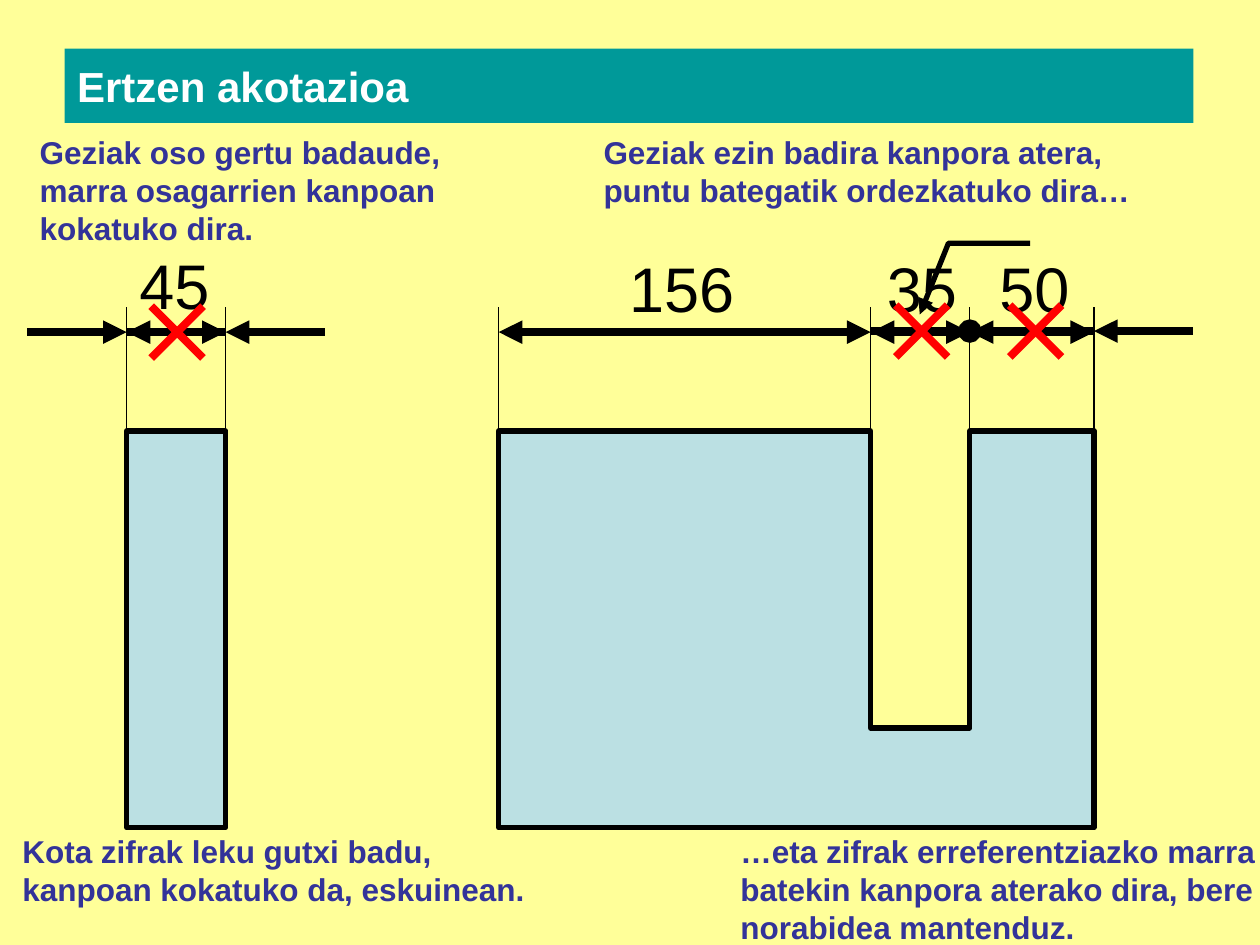
from lxml.etree import SubElement
from pptx import Presentation
from pptx.dml.color import RGBColor
from pptx.enum.shapes import MSO_CONNECTOR, MSO_SHAPE
from pptx.enum.text import MSO_ANCHOR, PP_ALIGN
from pptx.oxml.ns import qn
from pptx.util import Pt

CREAM = RGBColor(0xFF, 0xFF, 0x99)
TEAL = RGBColor(0x00, 0x99, 0x99)
PALE_BLUE = RGBColor(0xBB, 0xE0, 0xE3)
INDIGO = RGBColor(0x33, 0x33, 0x99)
BLACK = RGBColor(0, 0, 0)
WHITE = RGBColor(0xFF, 0xFF, 0xFF)
RED = RGBColor(0xFF, 0, 0)

# Edges of the two parts, in points
BAR_LEFT, BAR_RIGHT = 72.4, 129
PART_LEFT, SLOT_LEFT, SLOT_RIGHT, PART_RIGHT = 285, 497.5, 554.2, 625.2
PART_TOP, SLOT_BOTTOM, PART_BOTTOM = 246.4, 416, 473
EXTENSION_TOP = 175.6
BAR_Y, PART_Y = 189.8, 189.2
ARROW_LENGTH = 56.7
CROSS_SIZE = 29.6


def add_ends(shape, head, tail):
    line = shape.line._get_or_add_ln()
    for tag, kind in (("a:headEnd", head), ("a:tailEnd", tail)):
        if kind:
            SubElement(line, qn(tag), type=kind)


def add_line(page, start, end, width=4.5, color=BLACK, head=None, tail=None):
    points = [Pt(value) for value in (*start, *end)]
    line = page.shapes.add_connector(MSO_CONNECTOR.STRAIGHT, *points)
    line.line.color.rgb = color
    line.line.width = Pt(width)
    add_ends(line, head, tail)
    SubElement(line._element.spPr, qn("a:effectLst"))


def add_dimension(page, left, right, y, head=None, tail=None):
    add_line(page, (left, y), (right, y), head=head, tail=tail)


def add_cross(page, center_x, center_y):
    half = CROSS_SIZE / 2
    for side in (-half, half):
        add_line(page, (center_x + side, center_y - half),
                 (center_x - side, center_y + half), color=RED)


def style_outline(shape, fill=None):
    shape.shadow.inherit = False
    if fill is None:
        shape.fill.background()
    else:
        shape.fill.solid()
        shape.fill.fore_color.rgb = fill
    shape.line.color.rgb = BLACK
    shape.line.width = Pt(3)


def add_outline(page, points, close=True):
    corners = [(Pt(x), Pt(y)) for x, y in points]
    builder = page.shapes.build_freeform(*corners[0], scale=1.0)
    builder.add_line_segments(corners[1:], close=close)
    return builder.convert_to_shape()


def write(box, text, size, color, bold=False):
    box.text_frame.text = text
    para = box.text_frame.paragraphs[0]
    para.alignment = PP_ALIGN.LEFT
    span = para.runs[0]
    span.font.name = "Arial"
    span.font.size = Pt(size)
    span.font.bold = bold
    span.font.color.rgb = color


def add_text(page, text, left, top, width, height, size, color, bold=False):
    box = page.shapes.add_textbox(Pt(left), Pt(top), Pt(width), Pt(height))
    box.text_frame.word_wrap = True
    write(box, text, size, color, bold)


def add_title(page, text):
    box = page.shapes.add_shape(MSO_SHAPE.RECTANGLE, Pt(37), Pt(27.8), Pt(645), Pt(42.5))
    box.shadow.inherit = False
    box.fill.solid()
    box.fill.fore_color.rgb = TEAL
    box.line.fill.background()
    box.text_frame.vertical_anchor = MSO_ANCHOR.MIDDLE
    write(box, text, 24, WHITE, bold=True)


def main():
    deck = Presentation()
    deck.slide_width, deck.slide_height = Pt(720), Pt(540)
    page = deck.slides.add_slide(deck.slide_layouts[6])
    page.background.fill.solid()
    page.background.fill.fore_color.rgb = CREAM

    # Slotted part and narrow bar
    part = add_outline(page, [
        (PART_LEFT, PART_BOTTOM), (PART_LEFT, PART_TOP), (SLOT_LEFT, PART_TOP),
        (SLOT_LEFT, SLOT_BOTTOM), (SLOT_RIGHT, SLOT_BOTTOM),
        (SLOT_RIGHT, PART_TOP), (PART_RIGHT, PART_TOP), (PART_RIGHT, PART_BOTTOM)])
    style_outline(part, PALE_BLUE)
    bar = page.shapes.add_shape(
        MSO_SHAPE.RECTANGLE, Pt(BAR_LEFT), Pt(PART_TOP),
        Pt(BAR_RIGHT - BAR_LEFT), Pt(PART_BOTTOM - PART_TOP))
    style_outline(bar, PALE_BLUE)

    # Extension lines
    for x in (BAR_LEFT, BAR_RIGHT, PART_LEFT, SLOT_LEFT, SLOT_RIGHT, PART_RIGHT):
        add_line(page, (x, PART_TOP), (x, EXTENSION_TOP), width=0.75)

    # Dimension lines with arrows inside
    for left, right in ((BAR_LEFT, BAR_RIGHT), (PART_LEFT, SLOT_LEFT),
                        (SLOT_LEFT, SLOT_RIGHT), (SLOT_RIGHT, PART_RIGHT)):
        add_dimension(page, left, right, BAR_Y, "triangle", "triangle")

    # Arrows moved outside, and the dot that replaces them
    add_dimension(page, BAR_LEFT - ARROW_LENGTH, BAR_LEFT, BAR_Y, tail="triangle")
    add_dimension(page, BAR_LEFT, BAR_RIGHT, BAR_Y)
    add_dimension(page, BAR_RIGHT, BAR_RIGHT + ARROW_LENGTH, BAR_Y, head="triangle")
    add_dimension(page, SLOT_RIGHT, PART_RIGHT, PART_Y)
    add_dimension(page, PART_RIGHT, PART_RIGHT + ARROW_LENGTH, PART_Y, head="triangle")
    add_dimension(page, SLOT_RIGHT, SLOT_LEFT, PART_Y, head="oval")

    # Figures
    for text, left, top, width in (("45", 72.6, 137.5, 58), ("156", 352.4, 138.8, 80),
                                   ("50", 564, 138.8, 58), ("35", 499.7, 138.8, 58)):
        add_text(page, text, left, top, width, 51, 36, BLACK)

    # Crossed-out arrows
    for x, y in ((101.2, BAR_Y), (591.8, PART_Y), (526.7, PART_Y)):
        add_cross(page, x, y)

    # Leader line
    leader = add_outline(page, [(525.6, 179.7), (542, 139), (588.7, 139)], close=False)
    style_outline(leader)
    add_ends(leader, "triangle", None)

    # Explanations and title
    for text, left, top, width, height in (
            ("Geziak oso gertu badaude, marra osagarrien kanpoan kokatuko dira.",
             15.6, 72.7, 273, 73),
            ("Kota zifrak leku gutxi badu, kanpoan kokatuko da, eskuinean.",
             5.7, 472.1, 320.4, 51),
            ("Geziak ezin badira kanpora atera, puntu bategatik ordezkatuko dira…",
             337.8, 72.7, 332, 51),
            ("…eta zifrak erreferentziazko marra batekin kanpora aterako dira, "
             "bere norabidea mantenduz.", 416, 472.1, 342, 73)):
        add_text(page, text, left, top, width, height, 18, INDIGO, bold=True)
    add_title(page, "Ertzen akotazioa")

    deck.save("out.pptx")


if __name__ == "__main__":
    main()
